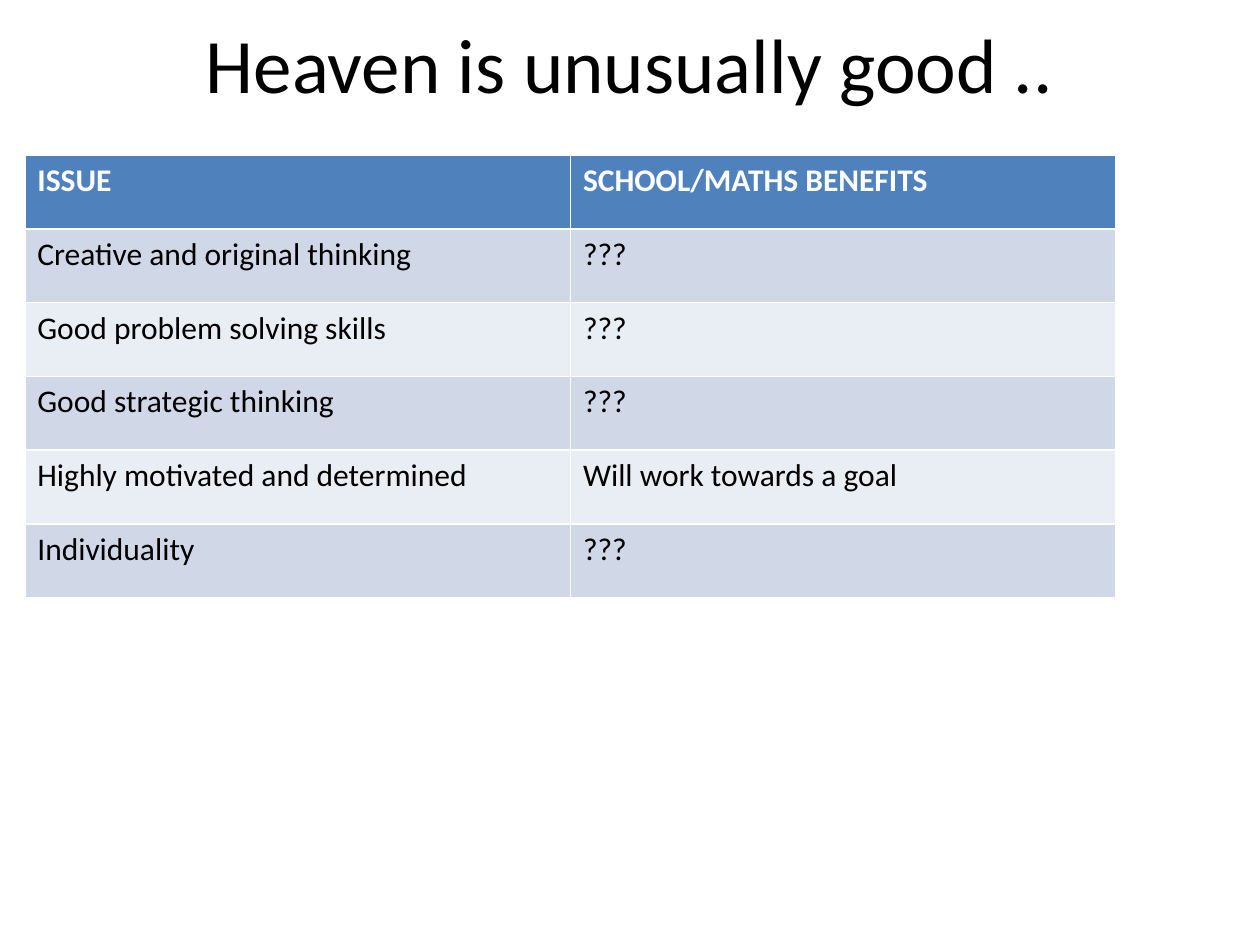
"""Build a slide that lists issues beside their school and maths benefits."""
from dataclasses import dataclass

from pptx import Presentation
from pptx.dml.color import RGBColor
from pptx.enum.text import MSO_ANCHOR, PP_ALIGN
from pptx.util import Cm, Pt


@dataclass(frozen=True)
class Theme:
    font: str = "Calibri"
    title_size: int = 44
    table_size: int = 18
    text: str = "000000"
    header_text: str = "FFFFFF"
    header_fill: str = "4F81BD"
    bands: tuple = ("D0D8E8", "E9EDF4")


theme = Theme()


def format_runs(paragraph, size, color, bold=False):
    for run in paragraph.runs:
        run.font.name = theme.font
        run.font.size = Pt(size)
        run.font.bold = bold
        run.font.color.rgb = RGBColor.from_string(color)


benefits = [
    ("ISSUE", "SCHOOL/MATHS BENEFITS"),
    ("Creative and original thinking", "???"),
    ("Good problem solving skills", "???"),
    ("Good strategic thinking", "???"),
    ("Highly motivated and determined", "Will work towards a goal"),
    ("Individuality", "???"),
]

presentation = Presentation()
presentation.slide_width = Cm(25.4)
presentation.slide_height = Cm(19.05)
slide = presentation.slides.add_slide(presentation.slide_layouts[5])

heading = slide.shapes.title
heading.left, heading.top = Cm(0), Cm(0)
heading.width, heading.height = presentation.slide_width, Cm(2.52)
heading.text_frame.text = "Heaven is unusually good .."
heading.text_frame.vertical_anchor = MSO_ANCHOR.MIDDLE
heading.text_frame.paragraphs[0].alignment = PP_ALIGN.CENTER
format_runs(heading.text_frame.paragraphs[0], theme.title_size, theme.text)

benefit_grid = slide.shapes.add_table(
    len(benefits), 2, Cm(0.5), Cm(3.13), Cm(22), Cm(8.92)
).table

for row_index, entries in enumerate(benefits):
    is_header = row_index == 0
    fill = theme.header_fill if is_header else theme.bands[(row_index - 1) % 2]
    color = theme.header_text if is_header else theme.text
    for column_index, entry in enumerate(entries):
        cell = benefit_grid.cell(row_index, column_index)
        cell.text_frame.text = entry
        cell.fill.solid()
        cell.fill.fore_color.rgb = RGBColor.from_string(fill)
        format_runs(cell.text_frame.paragraphs[0], theme.table_size, color, is_header)

presentation.save("out.pptx")
